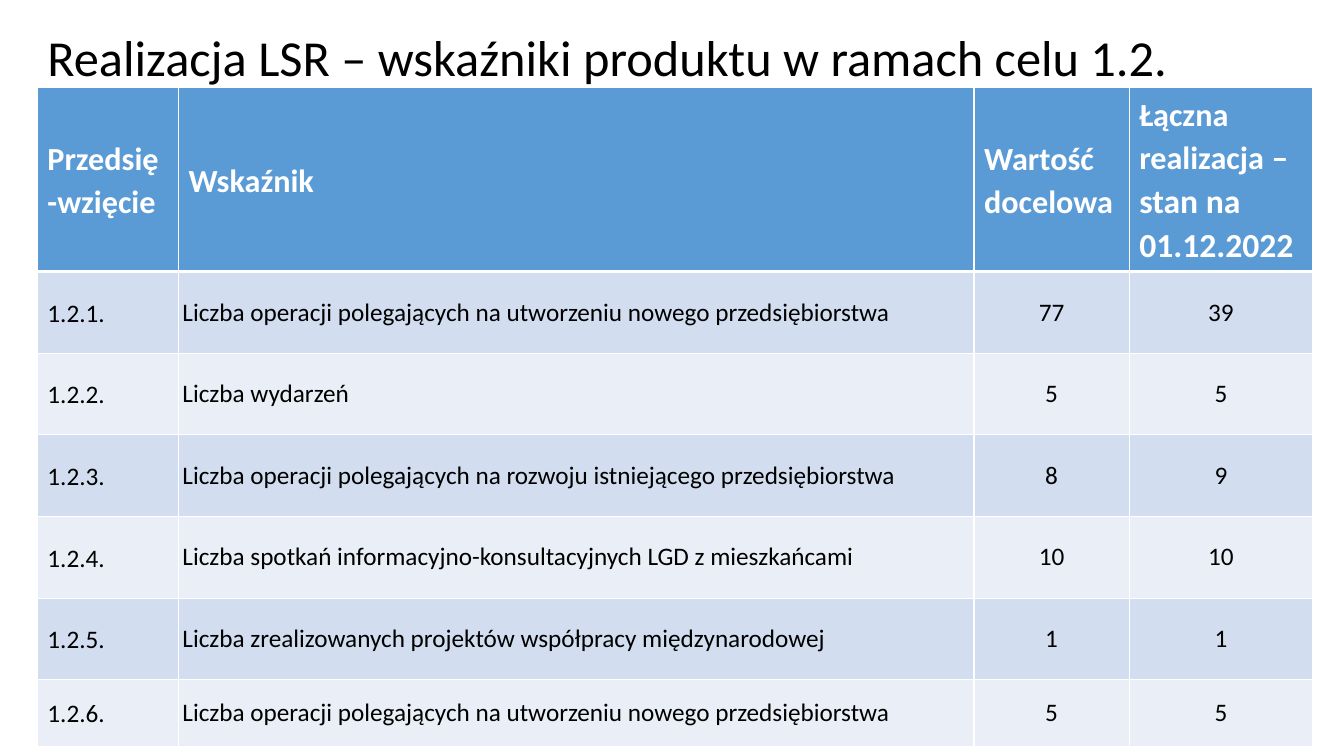
import lxml.etree
import pptx
import pptx.dml.color
import pptx.enum.text
import pptx.oxml.ns
import pptx.util

COLOURS = {
    "text": "000000",
    "header": "5B9BD5",
    "header_text": "FFFFFF",
    "odd_row": "D2DEEF",
    "even_row": "EAEFF7",
    "grid": "FFFFFF",
}
ALIGN = pptx.enum.text.PP_ALIGN
MIDDLE = pptx.enum.text.MSO_ANCHOR.MIDDLE

TITLE = "Realizacja LSR – wskaźniki produktu w ramach celu 1.2."
HEADINGS = [
    [("Przedsię-wzięcie", 23)],
    [("Wskaźnik", 23)],
    [("Wartość docelowa", 23)],
    [("Łączna realizacja ", 23), ("– stan na 01.12.2022", 24)],
]
INDICATORS = [
    ("1.2.1.", "Liczba operacji polegających na utworzeniu nowego przedsiębiorstwa", 77, 39),
    ("1.2.2.", "Liczba wydarzeń", 5, 5),
    ("1.2.3.", "Liczba operacji polegających na rozwoju istniejącego przedsiębiorstwa", 8, 9),
    ("1.2.4.", "Liczba spotkań informacyjno-konsultacyjnych LGD z mieszkańcami", 10, 10),
    ("1.2.5.", "Liczba zrealizowanych projektów współpracy międzynarodowej", 1, 1),
    ("1.2.6.", "Liczba operacji polegających na utworzeniu nowego przedsiębiorstwa", 5, 5),
]

# Percentages of the slide's width and height
LEFT, WIDTH = 2.78, 95.05
COLUMN_WIDTHS = [10.5, 59.19, 11.55, 13.65]
ROW_HEIGHTS = [18.53] + [10.8] * 5 + [8.8]

# Alignment, line spacing, side margin and top/bottom margin in inches
CODE_STYLE = (ALIGN.LEFT, 1.07, 0.1, 0.05)
NAME_STYLE = (ALIGN.LEFT, 1.0, 0.04, 0)
VALUE_STYLE = (ALIGN.CENTER, 1.0, 0, 0)
COLUMN_STYLES = [CODE_STYLE, NAME_STYLE, VALUE_STYLE, VALUE_STYLE]


class SlideBuilder:
    font = "Calibri"

    def __init__(self, presentation):
        self.width = presentation.slide_width
        self.height = presentation.slide_height
        self.slide = presentation.slides.add_slide(presentation.slide_layouts[5])

    def across(self, percent):
        return round(self.width * percent / 100)

    def down(self, percent):
        return round(self.height * percent / 100)

    def colour(self, key):
        return pptx.dml.color.RGBColor.from_string(COLOURS[key])

    def fill_paragraph(self, paragraph, runs, colour, style, bold=False):
        """Fill a paragraph with (text, size) runs."""
        paragraph.alignment, paragraph.line_spacing = style[:2]
        paragraph.font.name = self.font
        paragraph.font.bold = bold
        paragraph.font.color.rgb = self.colour(colour)
        paragraph.font.size = pptx.util.Pt(runs[0][1])
        for text, size in runs:
            run = paragraph.add_run()
            run.text = text
            if size != runs[0][1]:
                run.font.size = pptx.util.Pt(size)

    def title(self, text, top, height):
        heading = self.slide.shapes.title
        heading.left, heading.top = self.across(LEFT), self.down(top)
        heading.width, heading.height = self.across(WIDTH), self.down(height)
        frame = heading.text_frame
        frame.word_wrap = True
        frame.auto_size = pptx.enum.text.MSO_AUTO_SIZE.NONE
        frame.vertical_anchor = MIDDLE
        self.fill_paragraph(frame.paragraphs[0], [(text, 36)], "text", (ALIGN.LEFT, 0.9))

    def table(self, top):
        table = self.slide.shapes.add_table(
            len(ROW_HEIGHTS), len(COLUMN_WIDTHS), self.across(LEFT), self.down(top),
            self.across(WIDTH), self.down(sum(ROW_HEIGHTS))).table
        for column, width in zip(table.columns, COLUMN_WIDTHS):
            column.width = self.across(width)
        for row, height in zip(table.rows, ROW_HEIGHTS):
            row.height = self.down(height)
        return table

    def cell(self, cell, runs, fill, colour, style, bold=False, top=1, bottom=1):
        """Format a cell; top and bottom are border widths in points."""
        cell.vertical_anchor = MIDDLE
        cell.margin_left = cell.margin_right = pptx.util.Inches(style[2])
        cell.margin_top = cell.margin_bottom = pptx.util.Inches(style[3])
        cell.fill.solid()
        cell.fill.fore_color.rgb = self.colour(fill)
        self.fill_paragraph(cell.text_frame.paragraphs[0], runs, colour, style, bold)
        self.borders(cell, {"L": 1, "R": 1, "T": top, "B": bottom})

    def borders(self, cell, widths):
        qn = pptx.oxml.ns.qn
        properties = cell._tc.get_or_add_tcPr()
        for position, (side, points) in enumerate(widths.items()):
            line = lxml.etree.Element(qn(f"a:ln{side}"), w=str(pptx.util.Pt(points)))
            solid = lxml.etree.SubElement(line, qn("a:solidFill"))
            lxml.etree.SubElement(solid, qn("a:srgbClr"), val=COLOURS["grid"])
            properties.insert(position, line)


def main():
    presentation = pptx.Presentation()
    presentation.slide_width = pptx.util.Inches(13.33)
    presentation.slide_height = pptx.util.Inches(7.5)
    builder = SlideBuilder(presentation)
    builder.title(TITLE, top=-1.73, height=19.33)

    table = builder.table(top=11.6)
    for column, heading in enumerate(HEADINGS):
        builder.cell(table.cell(0, column), heading, "header", "header_text",
                     CODE_STYLE, bold=True, bottom=3)
    for row, indicator in enumerate(INDICATORS, start=1):
        fill = "odd_row" if row % 2 else "even_row"
        for column, (value, style) in enumerate(zip(indicator, COLUMN_STYLES)):
            builder.cell(table.cell(row, column), [(str(value), 18)], fill, "text",
                         style, top=3 if row == 1 else 1)
    presentation.save("out.pptx")


if __name__ == "__main__":
    main()
